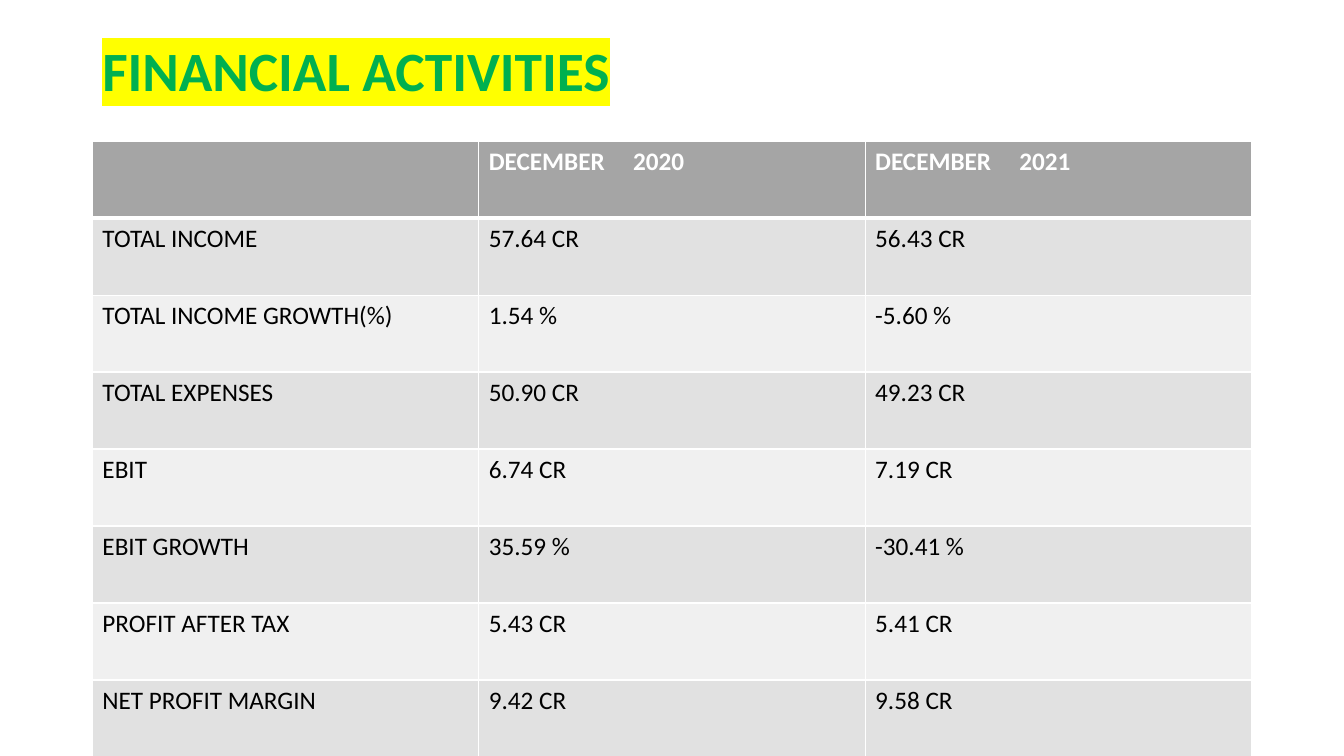
from lxml.etree import SubElement as Sub, Element
from pptx import Presentation
from pptx.dml.color import RGBColor as RGB
from pptx.enum.text import MSO_ANCHOR as Anchor
from pptx.oxml.ns import qn
from pptx.util import Pt

WHITE = RGB(0xFF, 0xFF, 0xFF)
BLACK = RGB(0, 0, 0)
GREEN = RGB(0x00, 0xB0, 0x50)
YELLOW = RGB(0xFF, 0xFF, 0x00)
HEAD = RGB(0xA5, 0xA5, 0xA5)
BANDS = (RGB(0xF0, 0xF0, 0xF0), RGB(0xE1, 0xE1, 0xE1))
FONT = "Calibri"
LEFT, WIDTH = Pt(66), Pt(828)

ROWS = (
    ("", "DECEMBER\t2020", "DECEMBER\t2021"),
    ("TOTAL INCOME", "57.64 CR", "56.43 CR"),
    ("TOTAL INCOME GROWTH(%)", "1.54 %", "-5.60 %"),
    ("TOTAL EXPENSES", "50.90 CR", "49.23 CR"),
    ("EBIT", "6.74 CR", "7.19 CR"),
    ("EBIT GROWTH", "35.59 %", "-30.41 %"),
    ("PROFIT AFTER TAX", "5.43 CR", "5.41 CR"),
    ("NET PROFIT MARGIN", "9.42 CR", "9.58 CR"),
)


def add_run(para, text, size, color, bold):
    """Add one styled run to a paragraph."""
    run = para.add_run()
    run.text = text
    font = run.font
    font.name, font.size, font.bold = FONT, Pt(size), bold
    font.color.rgb = color
    return run


def mark(run, color):
    """Highlight a coloured run."""
    light = Element(qn("a:highlight"))
    Sub(light, qn("a:srgbClr"), val=str(color))
    run.font.fill.solid()
    run.font.color.rgb = GREEN
    run.font._element.find(qn("a:solidFill")).addnext(light)


def set_tab(para, pos):
    """Give a paragraph one left tab stop."""
    tabs = Sub(para._p.get_or_add_pPr(), qn("a:tabLst"))
    Sub(tabs, qn("a:tab"), pos=str(pos), algn="l")


def set_edges(cell, top, bottom):
    """Draw white borders round a filled cell."""
    props = cell._tc.get_or_add_tcPr()
    edges = (("L", Pt(1)), ("R", Pt(1)), ("T", top), ("B", bottom))
    for spot, (side, width) in enumerate(edges):
        line = Element(qn(f"a:ln{side}"), w=str(width))
        fill = Sub(line, qn("a:solidFill"))
        Sub(fill, qn("a:srgbClr"), val=str(WHITE))
        props.insert(spot, line)


def add_title(slide, text):
    """Add the highlighted heading."""
    frame = slide.shapes.add_textbox(LEFT, Pt(28.8), WIDTH, Pt(46.8)).text_frame
    frame.word_wrap = True
    frame.vertical_anchor = Anchor.MIDDLE
    para = frame.paragraphs[0]
    para.line_spacing = 0.9
    mark(add_run(para, text, 39.6, GREEN, True), YELLOW)


def fill_cell(cell, text, row):
    """Write and style one cell of the given row."""
    head = row == 0
    cell.fill.solid()
    cell.fill.fore_color.rgb = HEAD if head else BANDS[row % 2]
    set_edges(cell, Pt(3 if row == 1 else 1), Pt(3 if head else 1))
    para = cell.text_frame.paragraphs[0]
    if head:
        set_tab(para, Pt(103))
    if text:
        add_run(para, text, 18, WHITE if head else BLACK, head)


def add_grid(slide, rows):
    """Add the table of yearly figures."""
    high = Pt(55)
    table = slide.shapes.add_table(
        len(rows), len(rows[0]), LEFT, Pt(100.8), WIDTH, high * len(rows)
    ).table
    for row, texts in enumerate(rows):
        table.rows[row].height = high
        for col, text in enumerate(texts):
            fill_cell(table.cell(row, col), text, row)


def main():
    """Build and save the slide."""
    deck = Presentation()
    deck.slide_width, deck.slide_height = Pt(960), Pt(540)
    slide = deck.slides.add_slide(deck.slide_layouts[6])
    add_title(slide, "FINANCIAL ACTIVITIES")
    add_grid(slide, ROWS)
    deck.save("out.pptx")


if __name__ == "__main__":
    main()
